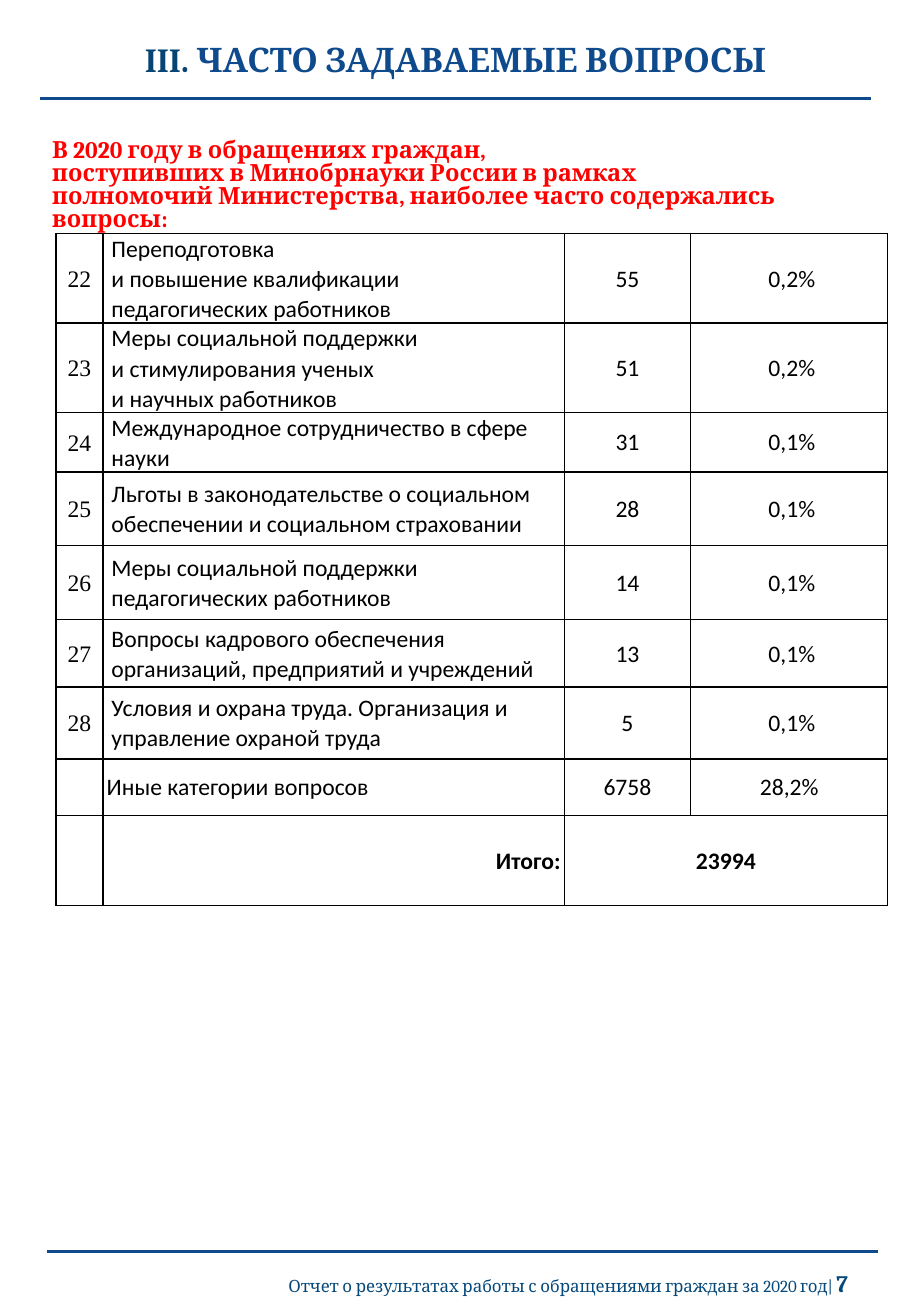
from lxml.etree import SubElement
from pptx import Presentation
from pptx.dml.color import RGBColor
from pptx.enum.shapes import MSO_CONNECTOR
from pptx.enum.text import MSO_ANCHOR, MSO_AUTO_SIZE, PP_ALIGN
from pptx.oxml import parse_xml
from pptx.oxml.ns import qn
from pptx.util import Pt

NS = "http://schemas.openxmlformats.org/drawingml/2006/main"
NAVY = "0E4A8C"


def color(value):
    return RGBColor.from_string(value)


def format_run(r, font, size, value, bold=False):
    r.font.name = font
    r.font.size = Pt(size)
    r.font.bold = bold
    r.font.color.rgb = color(value)


prs = Presentation()
prs.slide_width, prs.slide_height = Pt(540), Pt(779.76)
s = prs.slides.add_slide(prs.slide_layouts[6])

text_boxes = [
    ((0, 13, 540, 47.5), MSO_ANCHOR.MIDDLE, PP_ALIGN.CENTER, 0.9, False,
     [[("III. ", 20, "064473", True), ("ЧАСТО ЗАДАВАЕМЫЕ ВОПРОСЫ", 20, NAVY, True)]]),
    ((114.5, 751.7, 395.3, 20.9), MSO_ANCHOR.TOP, PP_ALIGN.RIGHT, 0.8, True,
     [[("Отчет о результатах работы с обращениями граждан за 2020 год| ", 10, "064879", False),
       ("7", 14, "064879", True)]]),
    ((23.8, 79.9, 459.5, 48.2), MSO_ANCHOR.TOP, PP_ALIGN.LEFT, 0.8, True,
     [[("В 2020 году в обращениях граждан,", 14, "FF0000", True)],
      [("поступивших в Минобрнауки России в рамках полномочий Министерства, "
        "наиболее часто содержались вопросы:", 14, "FF0000", True)]]),
]
for box, anchor, align, spacing, grow, paragraphs in text_boxes:
    sp = s.shapes.add_textbox(*[Pt(v) for v in box])
    tf = sp.text_frame
    tf.word_wrap = True
    tf.vertical_anchor = anchor
    if grow:
        tf.auto_size = MSO_AUTO_SIZE.SHAPE_TO_FIT_TEXT
    for i, runs in enumerate(paragraphs):
        p = tf.add_paragraph() if i else tf.paragraphs[0]
        p.alignment = align
        p.line_spacing = spacing
        for text, size, value, bold in runs:
            r = p.add_run()
            r.text = text
            format_run(r, "Cambria", size, value, bold)

for left, top in [(23.8, 58.5), (28.1, 741.6)]:
    rule = s.shapes.add_connector(
        MSO_CONNECTOR.STRAIGHT, Pt(left), Pt(top), Pt(left + 492.5), Pt(top))
    rule.line.color.rgb = color(NAVY)
    rule.line.width = Pt(1.5)
    SubElement(rule._element.spPr, qn("a:effectLst"))

questions = [
    ("Переподготовка\vи повышение квалификации педагогических работников", "55", "0,2%"),
    ("Меры социальной поддержки\vи стимулирования ученых\vи научных работников", "51", "0,2%"),
    ("Международное сотрудничество в сфере науки", "31", "0,1%"),
    ("Льготы в законодательстве о социальном обеспечении и социальном страховании", "28", "0,1%"),
    ("Меры социальной поддержки педагогических работников", "14", "0,1%"),
    ("Вопросы кадрового обеспечения организаций, предприятий и учреждений", "13", "0,1%"),
    ("Условия и охрана труда. Организация и управление охраной труда", "5", "0,1%"),
]
rows = [(str(n), name, count, f" {share}")
        for n, (name, count, share) in enumerate(questions, 22)]
rows += [("", "Иные категории вопросов", "6758", "28,2%"),
         ("", "Итого:", "23994", "")]
widths = [28, 273.4, 75, 116.8]
heights = [53, 53, 35, 43.5, 44, 40, 42.5, 33.5, 53.5]

frame = s.shapes.add_table(len(rows), len(widths), Pt(33.1), Pt(138.4),
                           Pt(sum(widths)), Pt(sum(heights)))
table = frame.table
table.first_row = table.horz_banding = False
for column, width in zip(table.columns, widths):
    column.width = Pt(width)
for row, height in zip(table.rows, heights):
    row.height = Pt(height)
total_row = len(rows) - 1
table.cell(total_row, 2).merge(table.cell(total_row, 3))

for i, values in enumerate(rows):
    for j, text in enumerate(values):
        cell = table.cell(i, j)
        cell.vertical_anchor = MSO_ANCHOR.MIDDLE
        cell.margin_left = cell.margin_right = Pt(5 if i < len(questions) else 2.2)
        cell.margin_top = cell.margin_bottom = 0
        for side in ["lnL", "lnR", "lnT", "lnB"]:
            cell._tc.get_or_add_tcPr().append(parse_xml(
                f'<a:{side} xmlns:a="{NS}" w="12700"><a:solidFill>'
                f'<a:srgbClr val="000000"/></a:solidFill></a:{side}>'))
        cell.fill.background()
        if not text:
            continue
        p = cell.text_frame.paragraphs[0]
        p.text = text
        p.line_spacing = 1.07 if j == 0 else 1.05
        p.alignment = PP_ALIGN.LEFT if j == 1 else PP_ALIGN.CENTER
        if i == total_row and j == 1:
            p.alignment = PP_ALIGN.RIGHT
        for r in p.runs:
            format_run(r, "Calibri" if j else "Times New Roman", 14, "000000", i == total_row)

prs.save("out.pptx")
